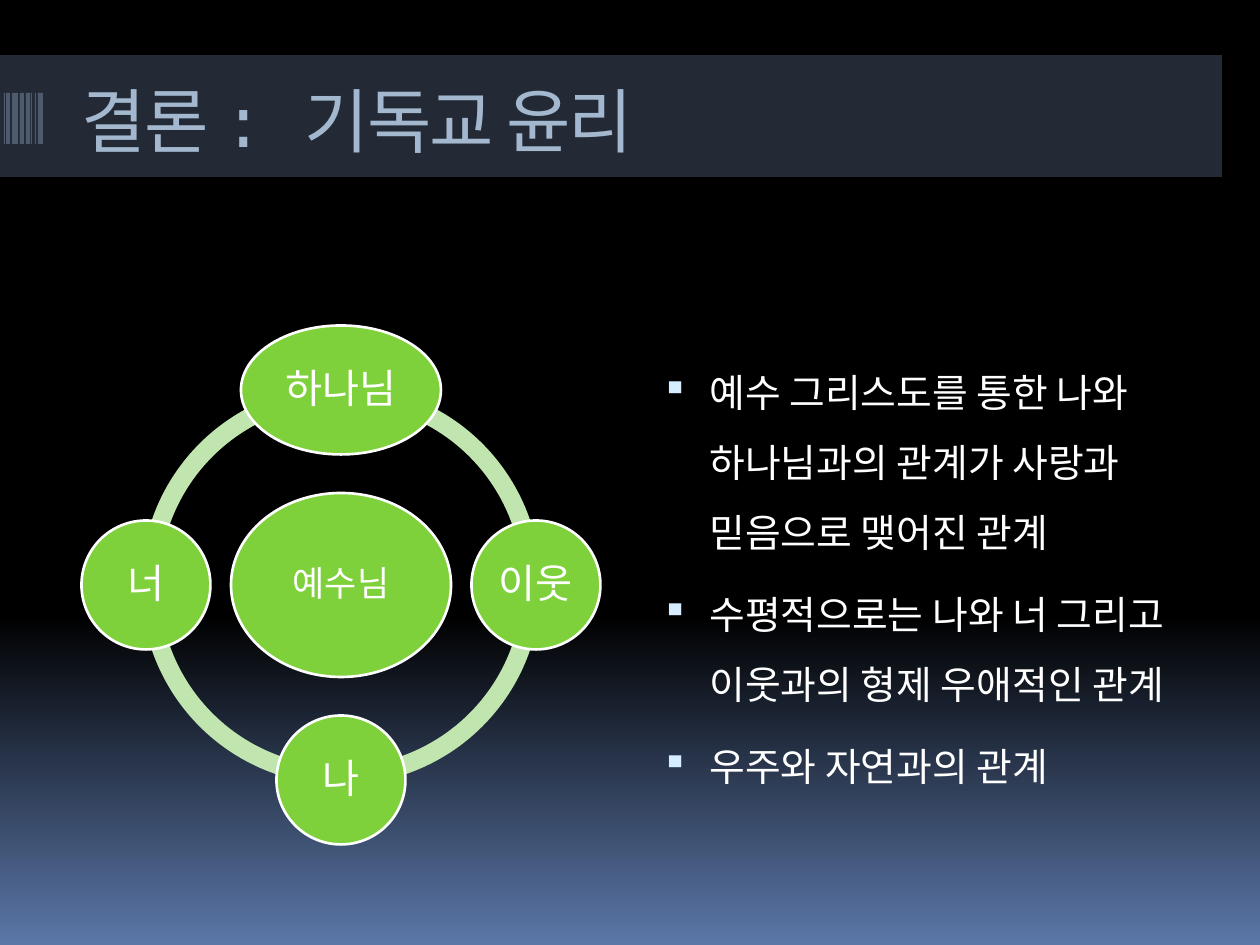
from lxml import etree
from pptx import Presentation
from pptx.dml.color import RGBColor
from pptx.enum.shapes import MSO_SHAPE
from pptx.enum.text import MSO_ANCHOR, PP_ALIGN
from pptx.oxml.ns import qn
from pptx.util import Pt

EMU_PER_PX = 914400 / 126
RECTANGLE, OVAL, BLOCK_ARC = MSO_SHAPE.RECTANGLE, MSO_SHAPE.OVAL, MSO_SHAPE.BLOCK_ARC
TOP, MIDDLE = MSO_ANCHOR.TOP, MSO_ANCHOR.MIDDLE
LEFT, CENTER = PP_ALIGN.LEFT, PP_ALIGN.CENTER

WHITE, BLACK, PALE_BLUE = "FFFFFF", "000000", "D6ECFF"
GREEN, PALE_GREEN = "7FD13B", "C0E5AF"
BAND, STRIPE, SKY = "586A86", "4E5B6F", "5B77A8"

TITLE = "결론 : 기독교 윤리"
BULLETS = [
    "예수 그리스도를 통한 나와 하나님과의 관계가 사랑과 믿음으로 맺어진 관계",
    "수평적으로는 나와 너 그리고 이웃과의 형제 우애적인 관계",
    "우주와 자연과의 관계",
]
STRIPES = [(4, 1), (6, 4), (12, 6), (20, 4), (26, 4), (31, 1), (35, 1), (38, 5)]  # left, width

HUB_X, HUB_Y = 341, 585
ORBIT, RING_RADIUS, RING_THICKNESS = 195, 200, 0.046
QUARTER_TURN = 54  # 90 degrees in block arc adjustment units
# text, direction from the hub, width, height, text size
CIRCLES = [
    ("예수님", (0, 0), 220, 184, 20),
    ("하나님", (0, -1), 200, 129, 23),
    ("이웃", (1, 0), 129, 129, 23),
    ("나", (0, 1), 129, 129, 23),
    ("너", (-1, 0), 129, 129, 23),
]


def px(value):
    return round(value * EMU_PER_PX)


def color(value):
    return RGBColor.from_string(value)


def add_shape(slide, kind, left, top, width, height, fill):
    shape = slide.shapes.add_shape(kind, px(left), px(top), px(width), px(height))
    shape.shadow.inherit = False
    shape.fill.solid()
    shape.fill.fore_color.rgb = color(fill)
    shape.line.fill.background()
    return shape


def add_span(para, text, size, font, text_color):
    span = para.add_run()
    span.text = text
    span.font.size = Pt(size)
    span.font.name = font
    span.font.color.rgb = color(text_color)
    return span


def add_background(slide):
    fill = slide.background.fill
    fill.gradient()
    fill.gradient_angle = 270
    for stop, position, value in zip(fill.gradient_stops, (0.65, 1), (BLACK, SKY)):
        stop.position = position
        stop.color.rgb = color(value)


def add_header(slide):
    band = add_shape(slide, RECTANGLE, 0, 55, 1222, 122, BAND)
    band_color = band.fill._xPr.find(qn("a:solidFill"))[0]
    etree.SubElement(band_color, qn("a:alpha"), val="40000")
    for left, width in STRIPES:
        add_shape(slide, RECTANGLE, left, 93, width, 51, STRIPE)

    title = slide.shapes.title
    title.left, title.top, title.width, title.height = map(px, (69, 71, 1071, 126))
    title.text_frame.vertical_anchor = TOP
    para = title.text_frame.paragraphs[0]
    para.alignment = LEFT
    span = add_span(para, TITLE, 40, "Courier New", PALE_BLUE)
    span.font._element.set("spc", "-100")


def add_ring(slide):
    for quarter in range(4):
        arc = add_shape(slide, BLOCK_ARC, HUB_X - RING_RADIUS, HUB_Y - RING_RADIUS,
                        2 * RING_RADIUS, 2 * RING_RADIUS, PALE_GREEN)
        arc.adjustments[0] = quarter * QUARTER_TURN
        arc.adjustments[1] = (quarter + 1) % 4 * QUARTER_TURN
        arc.adjustments[2] = RING_THICKNESS


def add_circles(slide):
    for text, (across, down), width, height, size in CIRCLES:
        left = HUB_X + across * ORBIT - width / 2
        top = HUB_Y + down * ORBIT - height / 2
        circle = add_shape(slide, OVAL, left, top, width, height, GREEN)
        circle.line.color.rgb = color(WHITE)
        circle.line.width = Pt(1.5)
        frame = circle.text_frame
        frame.vertical_anchor = MIDDLE
        frame.margin_left = frame.margin_right = px(4)
        frame.margin_top = frame.margin_bottom = px(4)
        para = frame.paragraphs[0]
        para.alignment = CENTER
        para.line_spacing = 0.9
        add_span(para, text, size, "Calibri", WHITE)


def set_bullet(para):
    properties = para._p.get_or_add_pPr()
    properties.set("marL", str(px(57)))
    properties.set("indent", str(-px(48)))
    bullet_color = etree.SubElement(properties, qn("a:buClr"))
    etree.SubElement(bullet_color, qn("a:srgbClr"), val=PALE_BLUE)
    etree.SubElement(properties, qn("a:buSzPct"), val="95000")
    etree.SubElement(properties, qn("a:buChar"), char="▪")


def add_bullets(slide):
    box = slide.shapes.add_textbox(px(640), px(339), px(557), px(546))
    frame = box.text_frame
    frame.word_wrap = True
    for index, text in enumerate(BULLETS):
        para = frame.add_paragraph() if index else frame.paragraphs[0]
        para.line_spacing = 1.5
        para.space_before = Pt(7)
        set_bullet(para)
        add_span(para, text, 22.2, "Calibri", WHITE)


def main():
    deck = Presentation()
    deck.slide_width, deck.slide_height = px(1260), px(945)
    slide = deck.slides.add_slide(deck.slide_layouts[5])
    add_background(slide)
    add_header(slide)
    add_ring(slide)
    add_circles(slide)
    add_bullets(slide)
    deck.save("out.pptx")


if __name__ == "__main__":
    main()
